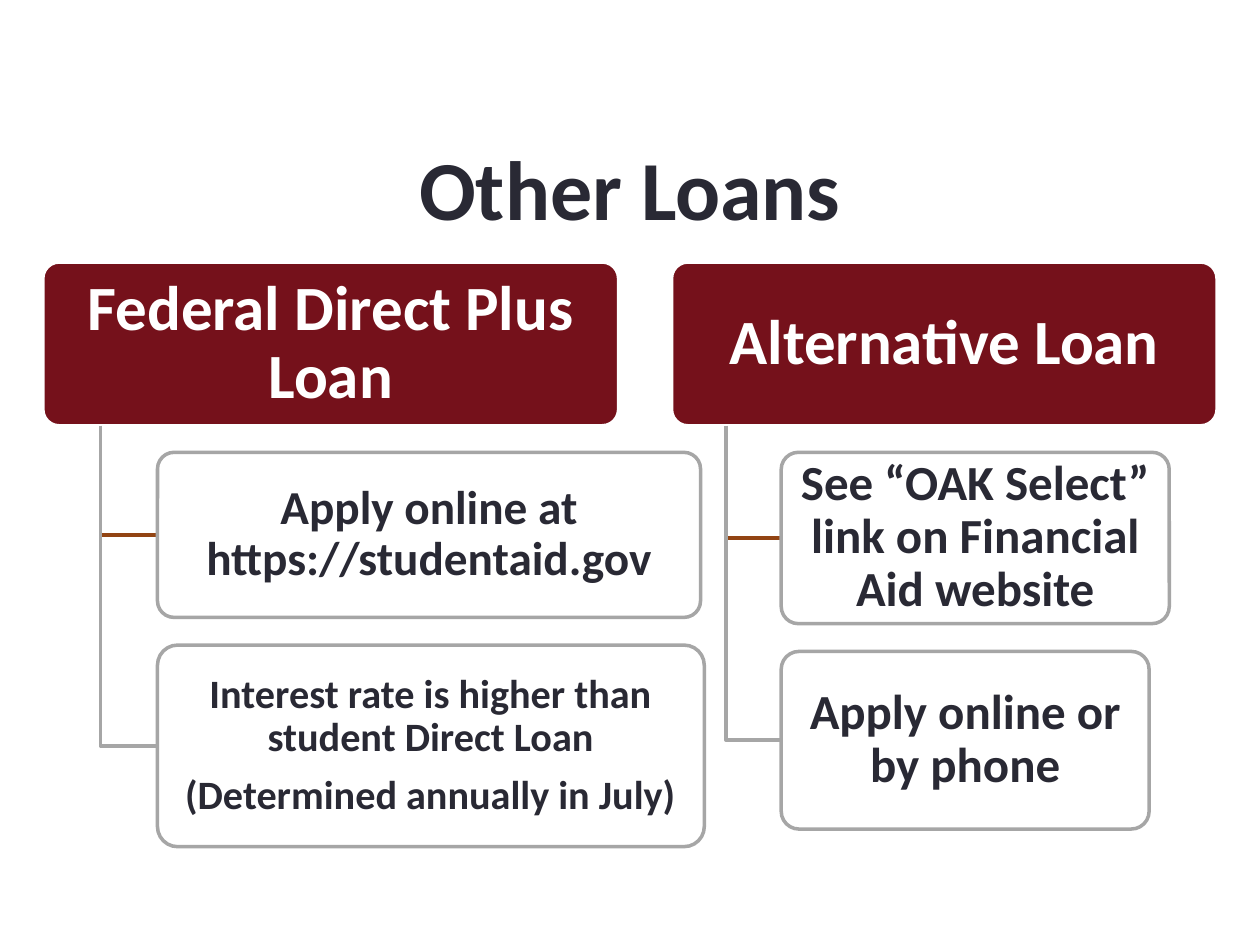
from dataclasses import dataclass

from lxml.etree import SubElement
from pptx import Presentation
from pptx.dml.color import RGBColor
from pptx.enum.shapes import MSO_SHAPE
from pptx.enum.text import MSO_ANCHOR, PP_ALIGN
from pptx.oxml.ns import qn
from pptx.util import Inches, Pt

COLORS = {
    "maroon": "75111B",
    "white": "FFFFFF",
    "ink": "292934",
    "gray": "A6A6A6",
    "rust": "924413",
}
FONT = "Calibri"
HEADER_TOP, HEADER_HEIGHT = 2.08, 1.3
STEM_SHARE = 0.1


@dataclass
class Detail:
    text: str
    top: float
    width: float
    height: float
    size: int
    branch: str
    inset: float = 0.06


@dataclass
class Loan:
    name: str
    left: float
    width: float
    detail_left: float
    details: list[Detail]


LOANS = [
    Loan("Federal Direct Plus Loan", 0.34, 4.57, 1.25, [
        Detail("Apply online at https://studentaid.gov", 3.59, 4.31, 1.31, 27, "rust"),
        Detail("Interest rate is higher than student Direct Loan\n"
               "(Determined annually in July)", 5.12, 4.34, 1.6, 23, "gray", 0.05),
    ]),
    Loan("Alternative Loan", 5.33, 4.33, 6.2, [
        Detail("See “OAK Select” link on Financial Aid website",
               3.59, 3.08, 1.36, 28, "rust"),
        Detail("Apply online or by phone", 5.17, 2.92, 1.41, 28, "gray"),
    ]),
]


def color(name: str) -> RGBColor:
    return RGBColor.from_string(COLORS[name])


def write(shape, text: str, size: int, ink: str, spacing: float = 0.9) -> None:
    frame = shape.text_frame
    frame.word_wrap = True
    frame.vertical_anchor = MSO_ANCHOR.MIDDLE
    frame.text = text
    for paragraph in frame.paragraphs:
        paragraph.alignment = PP_ALIGN.CENTER
        paragraph.line_spacing = spacing
        if paragraph is not frame.paragraphs[-1]:
            paragraph.space_after = Pt(round(size * 0.35))
        for run in paragraph.runs:
            run.font.name = FONT
            run.font.size = Pt(size)
            run.font.bold = True
            run.font.color.rgb = color(ink)


def add_box(slide, left: float, top: float, width: float, height: float,
            fill: str, line: str, inset: float):
    box = slide.shapes.add_shape(MSO_SHAPE.ROUNDED_RECTANGLE, Inches(left),
                                 Inches(top), Inches(width), Inches(height))
    box.adjustments[0] = 0.1
    box.shadow.inherit = False
    box.fill.solid()
    box.fill.fore_color.rgb = color(fill)
    box.line.color.rgb = color(line)
    box.line.width = Pt(2)
    frame = box.text_frame
    frame.margin_left = frame.margin_right = Inches(inset)
    frame.margin_top = frame.margin_bottom = Inches(inset - 0.02)
    return box


def add_branch(slide, loan: Loan, detail: Detail) -> None:
    stem = Inches(loan.left + loan.width * STEM_SHARE)
    middle = Inches(detail.top + detail.height / 2)
    builder = slide.shapes.build_freeform(stem, Inches(HEADER_TOP + HEADER_HEIGHT))
    builder.add_line_segments(
        [(stem, middle), (Inches(loan.detail_left), middle)], close=False)
    branch = builder.convert_to_shape()
    branch.shadow.inherit = False
    branch.fill.background()
    branch.line.color.rgb = color(detail.branch)
    branch.line.width = Pt(2)


def add_detail(slide, loan: Loan, detail: Detail) -> None:
    add_branch(slide, loan, detail)
    box = add_box(slide, loan.detail_left, detail.top, detail.width,
                  detail.height, "white", "gray", detail.inset)
    fill_color = box.fill._xPr.find(qn("a:solidFill"))[0]
    SubElement(fill_color, qn("a:alpha"), val="90000")
    write(box, detail.text, detail.size, "ink")


def add_loan(slide, loan: Loan) -> None:
    header = add_box(slide, loan.left, HEADER_TOP, loan.width, HEADER_HEIGHT,
                     "maroon", "white", 0.07)
    write(header, loan.name, 36, "white")
    for detail in loan.details:
        add_detail(slide, loan, detail)


def main() -> None:
    deck = Presentation()
    deck.slide_width, deck.slide_height = Inches(10), Inches(7.5)
    slide = deck.slides.add_slide(deck.slide_layouts[6])
    title = slide.shapes.add_textbox(Inches(0.5), Inches(0.86), Inches(9), Inches(1.25))
    write(title, "Other Loans", 48, "ink", 1.0)
    for loan in LOANS:
        add_loan(slide, loan)
    deck.save("out.pptx")


if __name__ == "__main__":
    main()
